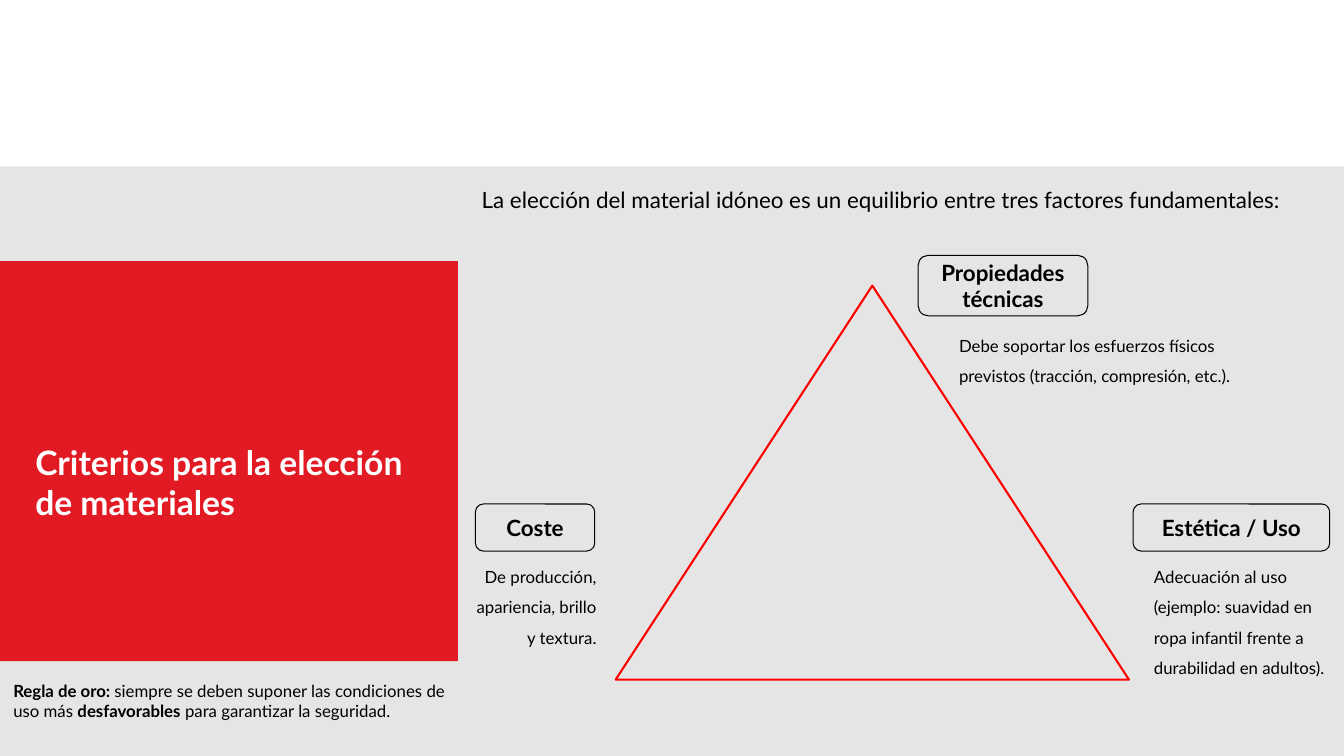
import pptx
import pptx.util
import pptx.dml.color
import pptx.enum.shapes
import pptx.enum.text

COLORS = {"panel": "E5E5E5", "brand": "E21A23", "triangle": "FF0000",
          "ink": "000000", "white": "FFFFFF"}
SHAPE = pptx.enum.shapes.MSO_SHAPE
ALIGN = pptx.enum.text.PP_ALIGN
ANCHOR = pptx.enum.text.MSO_ANCHOR

presentation = pptx.Presentation()
presentation.slide_width = pptx.util.Inches(13.33)
presentation.slide_height = pptx.util.Inches(7.5)
slide = presentation.slides.add_slide(presentation.slide_layouts[5])

# Grid of 160 columns by 90 rows; places are column, row, columns, rows
COLUMN = presentation.slide_width / 160
ROW = presentation.slide_height / 90


def add_shape(kind, place, fill=None, line=None, width=0.75):
    left, top, columns, rows = place
    shape = slide.shapes.add_shape(kind, int(left * COLUMN), int(top * ROW),
                                   int(columns * COLUMN), int(rows * ROW))
    shape.shadow.inherit = False
    if fill:
        shape.fill.solid()
        shape.fill.fore_color.rgb = pptx.dml.color.RGBColor.from_string(COLORS[fill])
    else:
        shape.fill.background()
    if line:
        shape.line.color.rgb = pptx.dml.color.RGBColor.from_string(COLORS[line])
        shape.line.width = pptx.util.Pt(width)
    else:
        shape.line.fill.background()
    return shape


def write(shape, runs, size, color="ink", anchor=ANCHOR.MIDDLE,
          align=ALIGN.LEFT, spacing=1.0):
    frame = shape.text_frame
    frame_format = {"word_wrap": True, "vertical_anchor": anchor,
                    "auto_size": pptx.enum.text.MSO_AUTO_SIZE.NONE}
    for name, value in frame_format.items():
        setattr(frame, name, value)
    paragraph = frame.paragraphs[0]
    paragraph.alignment = align
    paragraph.line_spacing = spacing
    for text, bold in runs:
        run = paragraph.add_run()
        run.text = text
        font_format = {"name": "Lato", "size": pptx.util.Pt(size), "bold": bold}
        for name, value in font_format.items():
            setattr(run.font, name, value)
        run.font.color.rgb = pptx.dml.color.RGBColor.from_string(COLORS[color])


# Background panels
add_shape(SHAPE.RECTANGLE, (0, 19.8, 160, 70.2), fill="panel")
add_shape(SHAPE.RECTANGLE, (0, 31.1, 54.5, 47.6), fill="brand")

# Title, brought in front of the panels
title = slide.shapes.title
title_format = {"left": int(3 * COLUMN), "top": int(52 * ROW),
                "width": int(47.9 * COLUMN), "height": int(10.9 * ROW)}
for name, value in title_format.items():
    setattr(title, name, value)
write(title, [("Criterios para la elección de materiales", True)], 24,
      color="white", anchor=ANCHOR.TOP)
slide.shapes._spTree.append(title._element)

# Triangle of factors
add_shape(SHAPE.ISOSCELES_TRIANGLE, (73.3, 34, 61.1, 46.9), line="triangle", width=1.5)

# Factors: label and its place, description, its place and alignment
factors = [
    ("Propiedades técnicas", (109.3, 30.4, 20.2, 7.2),
     "Debe soportar los esfuerzos físicos previstos (tracción, compresión, etc.).",
     (113, 38.2, 36.7, 8), ALIGN.LEFT),
    ("Coste", (56.6, 60, 14.2, 5.6),
     "De producción, apariencia, brillo y textura.",
     (54.4, 65.7, 17.8, 11.6), ALIGN.RIGHT),
    ("Estética / Uso", (134.9, 60, 23.4, 5.6),
     "Adecuación al uso (ejemplo: suavidad en ropa infantil frente a durabilidad en adultos).",
     (136.2, 65.7, 23.4, 15.2), ALIGN.LEFT),
]
for label, label_place, description, description_place, align in factors:
    label_box = add_shape(SHAPE.ROUNDED_RECTANGLE, label_place, line="ink")
    write(label_box, [(label, True)], 16, align=ALIGN.CENTER)
    left, top, columns, rows = description_place
    description_box = slide.shapes.add_textbox(int(left * COLUMN), int(top * ROW),
                                               int(columns * COLUMN), int(rows * ROW))
    write(description_box, [(description, False)], 12, anchor=ANCHOR.TOP,
          align=align, spacing=1.5)

# Introduction and golden rule
introduction = add_shape(SHAPE.ROUNDED_RECTANGLE, (55.9, 20.9, 99.8, 5.6))
write(introduction, [("La elección del material idóneo es un equilibrio entre "
                      "tres factores fundamentales:", False)], 16)
golden_rule = add_shape(SHAPE.ROUNDED_RECTANGLE, (0, 79.3, 55.9, 8.2))
write(golden_rule, [("Regla de oro: ", True),
                    ("siempre se deben suponer las condiciones de uso más ", False),
                    ("desfavorables", True),
                    (" para garantizar la seguridad.", False)], 12)

presentation.save("out.pptx")
